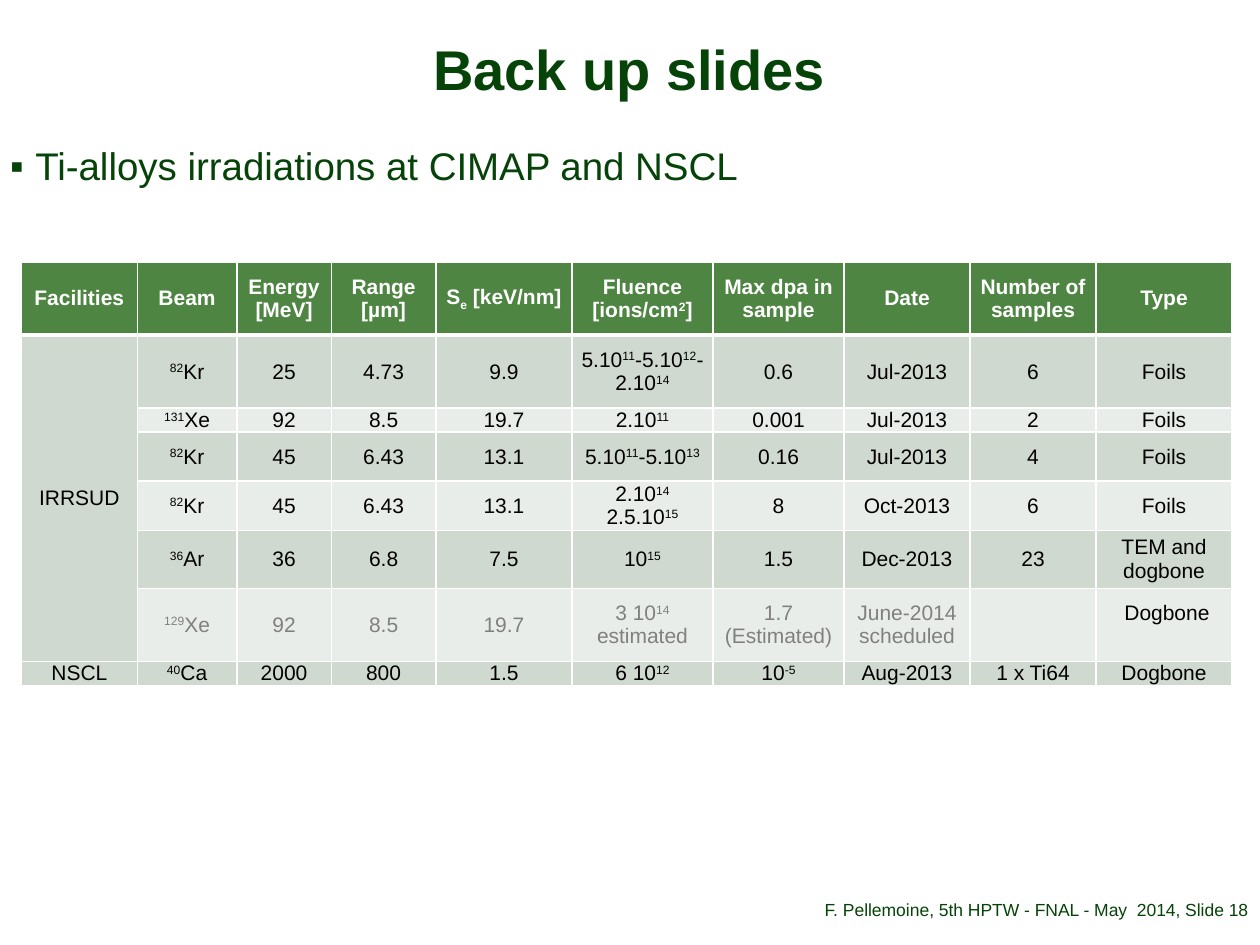
"""Build the backup slide listing the Ti-alloy irradiations."""
import dataclasses
import typing

import lxml.etree
import pptx
import pptx.dml.color
import pptx.enum.text
import pptx.util

Inches = pptx.util.Inches
Align = pptx.enum.text.PP_ALIGN
Anchor = pptx.enum.text.MSO_ANCHOR
Fit = pptx.enum.text.MSO_AUTO_SIZE
DRAWING = "http://schemas.openxmlformats.org/drawingml/2006/main"


@dataclasses.dataclass(frozen=True)
class Theme:
    """Colours, font and type sizes of the slide."""
    font: str = "Arial"
    green: str = "064308"
    header: str = "4E8542"
    dark_band: str = "D0D9CF"
    light_band: str = "E9EDE9"
    white: str = "FFFFFF"
    black: str = "000000"
    grey: str = "808080"
    title_size: int = 32
    body_size: int = 22
    table_size: int = 12
    footer_size: int = 10


THEME = Theme()


@dataclasses.dataclass(frozen=True)
class Label:
    """Text with its place, type and paragraph settings."""
    text: str
    place: tuple[float, float, float, float]
    size: int
    margins: tuple[float, float, float, float]
    align: Align
    anchor: Anchor
    spacing: float = 0.9
    bold: bool = False
    fit: Fit = Fit.NONE


@dataclasses.dataclass(frozen=True)
class Irradiation:
    """One table row, with ^superscript^ and ~subscript~ marks."""
    height: float
    cells: str
    facility: str = ""
    color: str = THEME.black

    def texts(self) -> list[str]:
        """Return the cell texts from left to right."""
        return [self.facility] + self.cells.split("|")


TITLE = Label("Back up slides", (0.08, 0.31, 9.83, 0.53), THEME.title_size,
              (0.06, 0.02, 0.06, 0.02), Align.CENTER, Anchor.MIDDLE, 0.88, True,
              Fit.SHAPE_TO_FIT_TEXT)
BODY = Label("Ti-alloys irradiations at CIMAP and NSCL", (0.08, 1.17, 9.83, 5.5),
             THEME.body_size, (0, 0, 0, 0), Align.LEFT, Anchor.TOP)
FOOTERS = [
    Label("F. Pellemoine, 5th HPTW - FNAL - May  2014", (6.16, 6.95, 3.17, 0.4),
          THEME.footer_size, (0, 0.05, 0, 0.05), Align.RIGHT, Anchor.BOTTOM),
    Label(", Slide 18", (9.33, 6.95, 0.67, 0.4),
          THEME.footer_size, (0, 0, 0, 0.05), Align.LEFT, Anchor.BOTTOM),
]
COLUMNS = [0.92, 0.79, 0.75, 0.83, 1.08, 1.12, 1.04, 1, 1, 1.08]
ROWS = [
    Irradiation(0.58, "Beam|Energy [MeV]|Range [µm]|S~e~ [keV/nm]|Fluence [ions/cm^2^]"
                "|Max dpa in sample|Date|Number of samples|Type",
                "Facilities", THEME.white),
    Irradiation(0.58, "^82^Kr|25|4.73|9.9|5.10^11^-5.10^12^-2.10^14^|0.6|Jul-2013|6|Foils",
                "IRRSUD"),
    Irradiation(0.19, "^131^Xe|92|8.5|19.7|2.10^11^|0.001|Jul-2013|2|Foils"),
    Irradiation(0.39, "^82^Kr|45|6.43|13.1|5.10^11^-5.10^13^|0.16|Jul-2013|4|Foils"),
    Irradiation(0.39, "^82^Kr|45|6.43|13.1|2.10^14^\n2.5.10^15^|8|Oct-2013|6|Foils"),
    Irradiation(0.46, "^36^Ar|36|6.8|7.5|10^15^|1.5|Dec-2013|23|TEM and dogbone"),
    Irradiation(0.58, "^129^Xe|92|8.5|19.7|3 10^14 ^estimated|1.7\n(Estimated)"
                "|June-2014 scheduled|| Dogbone", color=THEME.grey),
    Irradiation(0.19, "^40^Ca|2000|800|1.5|6 10^12^|10^-5^|Aug-2013|1 x Ti64|Dogbone",
                "NSCL"),
]
PENDING_ROW = 6


def apply(target: typing.Any, formats: dict[str, typing.Any]) -> None:
    """Set every attribute named in the formats."""
    for name, value in formats.items():
        setattr(target, name, value)


def rgb(code: str) -> pptx.dml.color.RGBColor:
    """Turn a hex code into a colour."""
    return pptx.dml.color.RGBColor.from_string(code)


def margins(values: tuple[float, float, float, float]) -> dict[str, int]:
    """Name the left, top, right and bottom margins."""
    sides = ("left", "top", "right", "bottom")
    return {f"margin_{side}": Inches(value) for side, value in zip(sides, values)}


def add_span(para, text: str, size: int, color: str, bold: bool, baseline: int = 0) -> None:
    """Add a formatted run to the paragraph."""
    span = para.add_run()
    span.text = text
    apply(span.font, {"name": THEME.font, "size": pptx.util.Pt(size), "bold": bold})
    span.font.color.rgb = rgb(color)
    if baseline:
        span.font._element.set("baseline", str(baseline * 1000))


def fill_label(box, label: Label) -> None:
    """Place and write a label in a box."""
    places = map(Inches, label.place)
    apply(box, dict(zip(("left", "top", "width", "height"), places)))
    apply(box.text_frame, margins(label.margins) | {
        "word_wrap": True, "auto_size": label.fit, "vertical_anchor": label.anchor})
    para = box.text_frame.paragraphs[0]
    apply(para, {"alignment": label.align, "line_spacing": label.spacing,
                 "space_before": pptx.util.Pt(0)})
    add_span(para, label.text, label.size, THEME.green, label.bold)


def add_bullet(para, indent: float) -> None:
    """Give the paragraph a square bullet with a hanging indent."""
    props = para._p.get_or_add_pPr()
    props.set("marL", str(Inches(indent)))
    props.set("indent", str(-Inches(indent)))
    lxml.etree.SubElement(props, f"{{{DRAWING}}}buFont", typeface=THEME.font)
    lxml.etree.SubElement(props, f"{{{DRAWING}}}buChar", char="▪")


def add_borders(cell, widths: dict[str, float]) -> None:
    """Draw white cell borders of the given widths."""
    props = cell._tc.get_or_add_tcPr()
    for side, width in widths.items():
        line = lxml.etree.SubElement(props, f"{{{DRAWING}}}ln{side}",
                                     w=str(pptx.util.Pt(width)))
        solid = lxml.etree.SubElement(line, f"{{{DRAWING}}}solidFill")
        lxml.etree.SubElement(solid, f"{{{DRAWING}}}srgbClr", val=THEME.white)


def write_cell(cell, text: str, color: str, bold: bool) -> None:
    """Write marked-up lines as centred paragraphs."""
    for number, line in enumerate(text.split("\n")):
        para = cell.text_frame.add_paragraph() if number else cell.text_frame.paragraphs[0]
        para.alignment = Align.CENTER
        for outer, chunk in enumerate(line.split("^")):
            for inner, piece in enumerate(chunk.split("~")):
                baseline = 30 if outer % 2 else -25 if inner % 2 else 0
                if piece:
                    add_span(para, piece, THEME.table_size, color, bold, baseline)


def add_irradiation_table(page) -> None:
    """Add the table of irradiations."""
    frame = page.shapes.add_table(
        len(ROWS), len(COLUMNS), Inches(0.17), Inches(2.08),
        Inches(sum(COLUMNS)), Inches(sum(row.height for row in ROWS)))
    table = frame.table
    apply(table, {"first_row": False, "horz_banding": False})
    for column, width in zip(table.columns, COLUMNS):
        column.width = Inches(width)
    for index, row in enumerate(ROWS):
        table.rows[index].height = Inches(row.height)
        band = THEME.dark_band if index % 2 else THEME.light_band
        for position, text in enumerate(row.texts()):
            cell = table.cell(index, position)
            pending_type = index == PENDING_ROW and position == len(COLUMNS) - 1
            bottom = 0.19 if pending_type else 0
            apply(cell, margins((0.07, 0, 0.07, bottom)) | {"vertical_anchor": Anchor.MIDDLE})
            add_borders(cell, {"L": 1, "R": 1, "T": 3 if index == 1 else 1,
                               "B": 1 if index else 3})
            cell.fill.solid()
            facility_band = THEME.dark_band if position == 0 else band
            cell.fill.fore_color.rgb = rgb(facility_band if index else THEME.header)
            write_cell(cell, text, THEME.black if pending_type else row.color, index == 0)
    table.cell(1, 0).merge(table.cell(PENDING_ROW, 0))


def main() -> None:
    """Build and save the deck."""
    deck = pptx.Presentation()
    apply(deck, {"slide_width": Inches(10), "slide_height": Inches(7.5)})
    page = deck.slides.add_slide(deck.slide_layouts[1])
    body = page.placeholders[1]
    add_bullet(body.text_frame.paragraphs[0], 0.2)
    fill_label(body, BODY)
    fill_label(page.shapes.title, TITLE)
    for footer in FOOTERS:
        fill_label(page.shapes.add_textbox(*map(Inches, footer.place)), footer)
    add_irradiation_table(page)
    deck.save("out.pptx")


if __name__ == "__main__":
    main()
